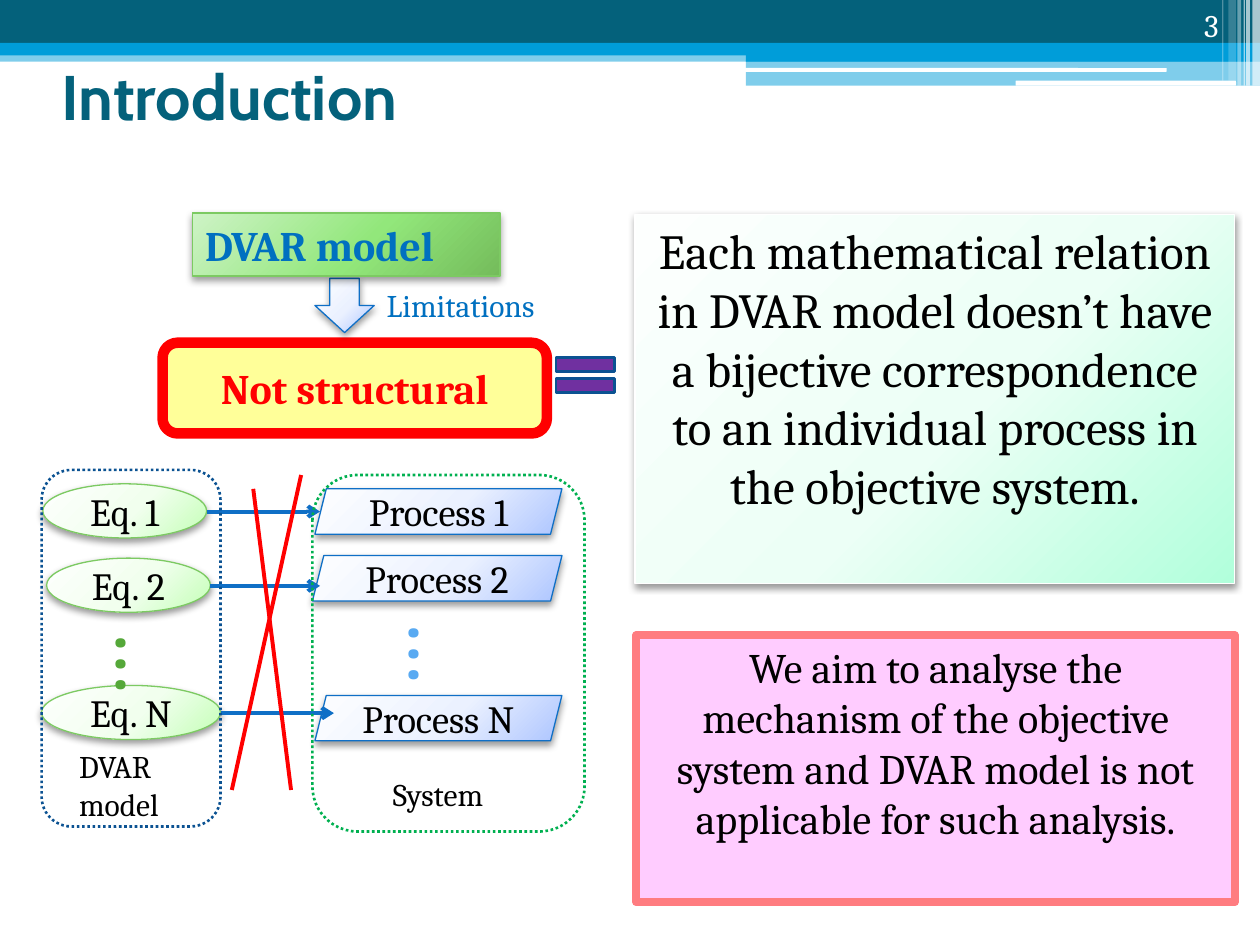
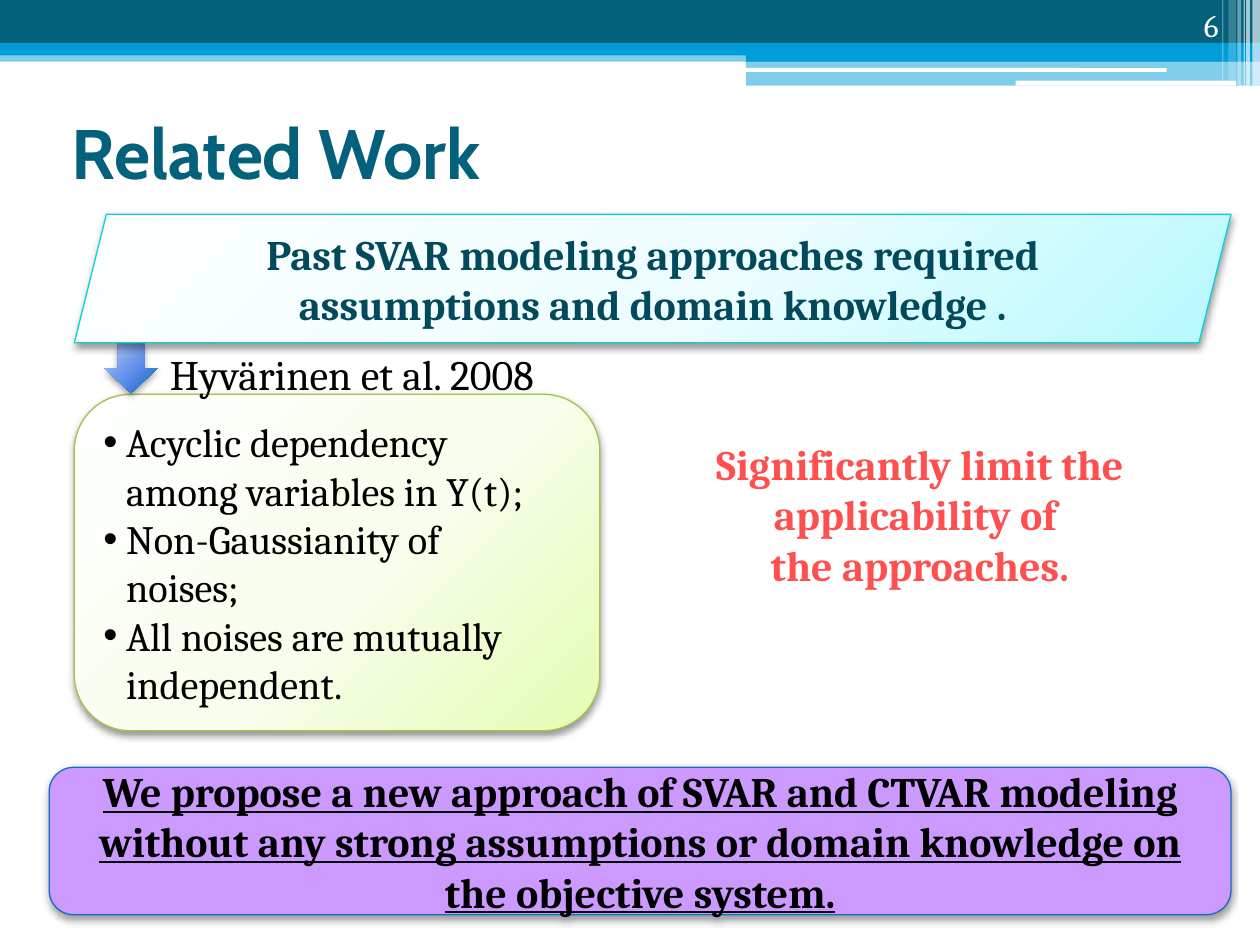
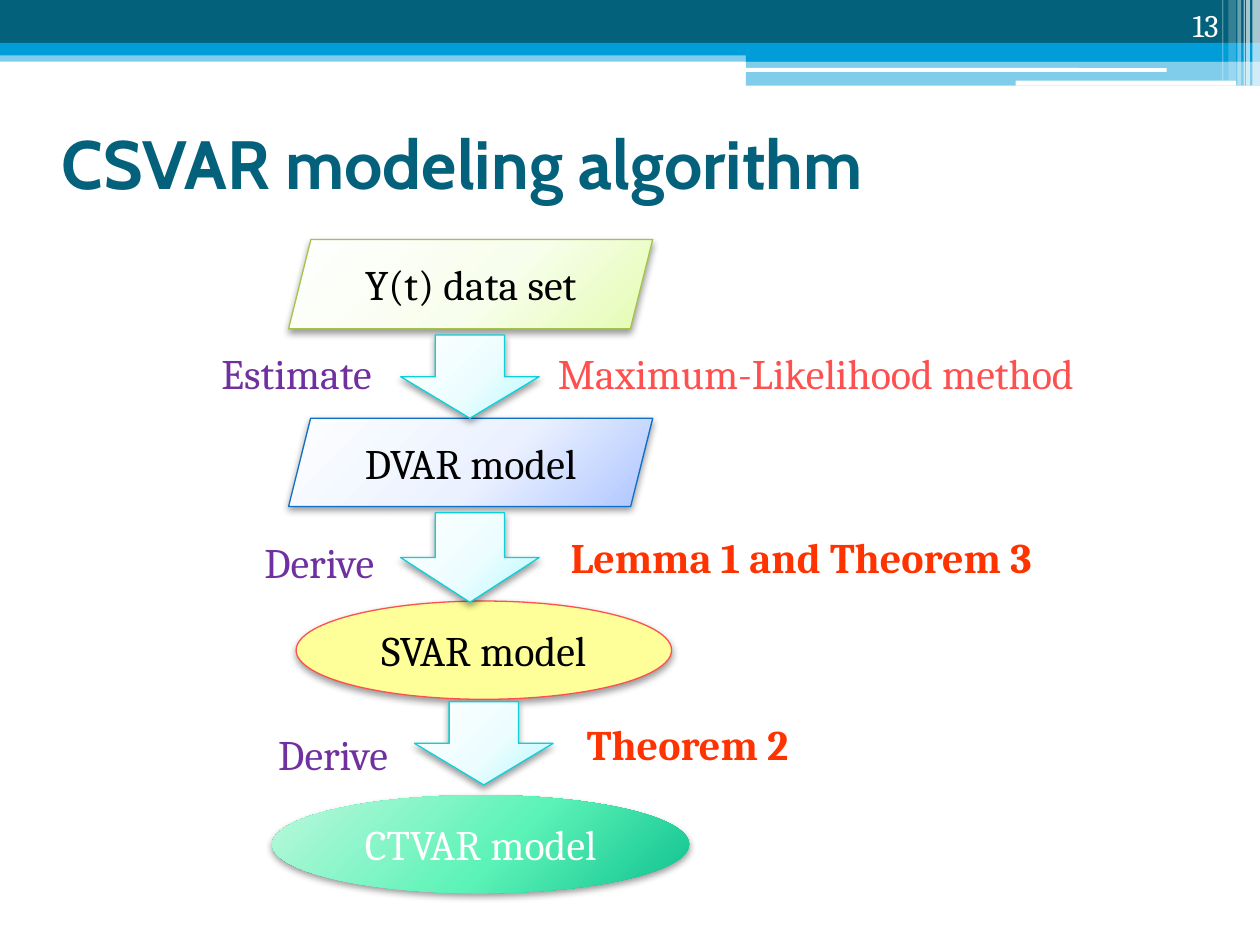
from pptx import Presentation
from pptx.dml.color import RGBColor
from pptx.enum.dml import MSO_LINE
from pptx.enum.shapes import MSO_CONNECTOR, MSO_SHAPE as SHAPE
from pptx.enum.text import MSO_ANCHOR as ANCHOR, MSO_AUTO_SIZE as FIT, PP_ALIGN as ALIGN
from pptx.oxml import parse_xml
from pptx.oxml.ns import nsdecls, qn
from pptx.util import Inches, Pt

COLOURS = {
    "teal": "04617B", "deep teal": "03495C", "sky": "009DD9", "blue": "0F6FC6",
    "label blue": "0070C0", "navy": "0B5292", "dots blue": "59AAF2",
    "green": "7CCA62", "dots green": "55A839", "system green": "00B050",
    "lime": "A5C249", "cyan": "0BD0D9", "yellow": "FFFF99", "red": "FF0000",
    "coral": "FF5050", "orange": "FF3300", "rose": "FF7C80", "pink": "FFCCFF",
    "lilac": "CC99FF", "purple": "7030A0", "black": "000000", "white": "FFFFFF",
}
GRADIENTS = {
    "mint": ("FDFFFE", "ECFFF6", "B1FFDB"),
    "pale blue": ("FDFEFF", "EBF1FF", "ADC5FF"),
    "pale green": ("FEFFFE", "F1FFEE", "C4FFB7"),
    "pale lime": ("FEFFFE", "F8FEED", "E4FCB2"),
    "pale cyan": ("FEFFFF", "EDFDFF", "B5F9FF"),
    "strong green": ("CEF3C6", "92E77B", "74BC5B"),
    "strong blue": ("BDCCF3", "5D8EEA", "0E67B8"),
    "strong aqua": ("BCF8DC", "5CF3B7", "0FC190"),
}
TITLE_FONT, TEXT_FONT = "Cabin", "Cambria"

BAND = [
    (SHAPE.RECTANGLE, (0, 0.4, 10, 0.09), "sky", 50),
    (SHAPE.RECTANGLE, (0, 0, 10, 0.34), "teal", 100),
    (SHAPE.RECTANGLE, (0, 0.34, 10, 0.1), "sky", 100),
    (SHAPE.RECTANGLE, (5.92, 0.39, 4.08, 0.1), "sky", 100),
    (SHAPE.RECTANGLE, (5.92, 0.48, 4.08, 0.2), "sky", 50),
    (SHAPE.ROUNDED_RECTANGLE, (5.91, 0.54, 3.35, 0.03), "white", 100),
    (SHAPE.ROUNDED_RECTANGLE, (8.06, 0.64, 1.75, 0.04), "white", 100),
    (SHAPE.RECTANGLE, (9.94, 0, 0.06, 0.68), "white", 65),
    (SHAPE.RECTANGLE, (9.89, 0, 0.03, 0.68), "white", 65),
    (SHAPE.RECTANGLE, (9.87, 0, 0.01, 0.68), "white", 60),
    (SHAPE.RECTANGLE, (9.82, 0, 0.03, 0.68), "white", 40),
    (SHAPE.RECTANGLE, (9.75, 0, 0.06, 0.64), "white", 20),
    (SHAPE.RECTANGLE, (9.7, 0, 0.01, 0.64), "white", 30),
]


def rgb(name):
    return RGBColor.from_string(COLOURS[name])


def inches(box):
    return [Inches(length) for length in box]


def offset(region, box):
    return (region[0] + box[0], region[1] + box[1], *box[2:])


def paint_gradient(shape, name):
    shape.fill.gradient()
    stops = "".join(
        f'<a:gs pos="{position}000"><a:srgbClr val="{colour}"/></a:gs>'
        for position, colour in zip((0, 55, 100), GRADIENTS[name]))
    gradient = parse_xml(
        f'<a:gradFill {nsdecls("a")} rotWithShape="1"><a:gsLst>{stops}</a:gsLst>'
        '<a:path path="circle"><a:fillToRect l="-40000" t="-90000" r="140000" b="190000"/>'
        '</a:path></a:gradFill>')
    properties = shape.element.spPr
    properties.replace(properties.find(qn("a:gradFill")), gradient)


def paint(shape, fill=None, line=None, width=0.75, shadow=False, alpha=100):
    if fill in GRADIENTS:
        paint_gradient(shape, fill)
    elif fill:
        shape.fill.solid()
        shape.fill.fore_color.rgb = rgb(fill)
        if alpha < 100:
            colour = next(shape.element.spPr.iter(qn("a:srgbClr")))
            colour.append(parse_xml(f'<a:alpha {nsdecls("a")} val="{alpha}000"/>'))
    else:
        shape.fill.background()
    if line:
        shape.line.color.rgb = rgb(line)
        shape.line.width = Pt(width)
    else:
        shape.line.fill.background()
    shape.shadow.inherit = False
    if shadow:
        shape.element.spPr.find(qn("a:effectLst")).append(parse_xml(
            f'<a:outerShdw {nsdecls("a")} blurRad="{Pt(4.1)}" dist="{Pt(2)}" dir="5400000" '
            'rotWithShape="0"><a:srgbClr val="000000"><a:alpha val="40000"/></a:srgbClr>'
            '</a:outerShdw>'))


def write(shape, lines, size=24, colour="black", bold=False, underline=False, font=TEXT_FONT,
          align=ALIGN.CENTER, anchor=ANCHOR.MIDDLE, wrap=True, fit=FIT.NONE):
    frame = shape.text_frame
    frame.word_wrap, frame.auto_size, frame.vertical_anchor = wrap, fit, anchor
    for index, line in enumerate(lines):
        paragraph = frame.add_paragraph() if index else frame.paragraphs[0]
        paragraph.alignment = align
        run = paragraph.add_run()
        run.text = line
        run.font.name, run.font.size = font, Pt(size)
        run.font.bold, run.font.underline = bold, underline
        run.font.color.rgb = rgb(colour)


def add_figure(slide, kind, box, *lines, fill=None, line=None, width=0.75, shadow=False,
               alpha=100, **style):
    figure = slide.shapes.add_shape(kind, *inches(box))
    paint(figure, fill, line, width, shadow, alpha)
    if lines:
        write(figure, lines, **style)
    return figure


def add_label(slide, box, *lines, **style):
    label = slide.shapes.add_textbox(*inches(box))
    settings = dict(align=ALIGN.LEFT, anchor=ANCHOR.TOP, wrap=False, fit=FIT.SHAPE_TO_FIT_TEXT)
    write(label, lines, **{**settings, **style})
    return label


def add_line(slide, start, end, colour, arrow=False):
    line = slide.shapes.add_connector(MSO_CONNECTOR.STRAIGHT, *inches(start + end))
    line.line.color.rgb = rgb(colour)
    line.line.width = Pt(2.25)
    if arrow:
        line.line.fill
        line.element.spPr.find(qn("a:ln")).append(
            parse_xml(f'<a:tailEnd {nsdecls("a")} type="arrow"/>'))
    line.element.spPr.append(parse_xml(f'<a:effectLst {nsdecls("a")}/>'))


def add_band_to_master(deck, slide):
    tree = deck.slide_master.shapes.element
    for index, (kind, box, fill, alpha) in enumerate(BAND):
        stripe = add_figure(slide, kind, box, fill=fill, alpha=alpha)
        tree.insert(2 + index, stripe.element)


def start_slide(deck, layout, title, corner, number, size, anchor=ANCHOR.MIDDLE):
    slide = deck.slides.add_slide(deck.slide_layouts.get_by_name(layout))
    heading = slide.shapes.title
    heading.left, heading.top, heading.width, heading.height = inches((*corner, 9, 1.17))
    write(heading, [title], size, "teal", True, font=TITLE_FONT, align=ALIGN.LEFT, anchor=anchor)
    add_label(slide, (8.94, 0, 0.83, 0.4), number, size=18, colour="white",
              align=ALIGN.RIGHT, anchor=ANCHOR.BOTTOM, wrap=True, fit=FIT.NONE)
    return slide


def add_limitation(slide, region):
    add_figure(slide, SHAPE.FLOWCHART_ALTERNATE_PROCESS, offset(region, (0, 1.03, 3.05, 0.72)),
               "Not structural", fill="yellow", line="red", width=6, colour="red", bold=True)
    add_figure(slide, SHAPE.MATH_EQUAL, offset(region, (3.04, 1.05, 0.63, 0.47)),
               fill="purple", line="navy", width=1.5)
    add_figure(slide, SHAPE.DOWN_ARROW, offset(region, (1.21, 0.52, 0.47, 0.43)),
               fill="pale blue", line="blue", shadow=True)
    add_label(slide, offset(region, (1.68, 0.53, 1.5, 0.4)), "Limitations",
              size=18, colour="label blue")
    add_figure(slide, SHAPE.RECTANGLE, offset(region, (0.24, 0, 2.44, 0.5)), "DVAR model",
               fill="strong green", line="green", shadow=True, colour="label blue", bold=True,
               align=ALIGN.LEFT, anchor=ANCHOR.TOP, wrap=False, fit=FIT.SHAPE_TO_FIT_TEXT)


def add_correspondence(slide, region):
    rows = [
        ("1", (0.01, 0.11, 1.3), (2.17, 0.15, 1.96), 2.21),
        ("2", (0.04, 0.7, 1.3), (2.15, 0.68, 1.98), 2.21),
        ("N", (0, 1.71, 1.42), (2.17, 1.79, 1.96), 2.32),
    ]
    for index, (left, top, width), process, arrow_end in rows:
        add_figure(slide, SHAPE.OVAL, offset(region, (left, top, width, 0.43)), f"Eq. {index}",
                   fill="pale green", line="green", shadow=True, size=22)
        add_figure(slide, SHAPE.PARALLELOGRAM, offset(region, (*process, 0.36)),
                   f"Process {index}", fill="pale blue", line="blue", shadow=True, size=22)
        middle = top + 0.22
        add_line(slide, offset(region, (left + width, middle)),
                 offset(region, (arrow_end, middle)), "blue", arrow=True)
    for corner, colour in (((0.3, 1.16), "dots green"), ((2.62, 1.08), "dots blue")):
        dots = add_label(slide, offset(region, (*corner, 1.04, 0.67)), "…",
                         size=50, colour=colour)
        dots.text_frame._txBody.bodyPr.set("vert", "eaVert")
    for start, end in (((2.06, 0.04), (1.51, 2.54)), ((1.68, 0.15), (1.98, 2.54))):
        add_line(slide, offset(region, start), offset(region, end), "red")
    for box, colour in (((0, 0, 1.42, 2.83), "navy"), ((2.15, 0.04, 2.16, 2.83), "system green")):
        group = add_figure(slide, SHAPE.ROUNDED_RECTANGLE, offset(region, box),
                           line=colour, width=1.5)
        group.line.dash_style = MSO_LINE.ROUND_DOT
    add_label(slide, offset(region, (0.2, 2.15, 0.97, 0.71)), "DVAR", "model", size=18)
    add_label(slide, offset(region, (2.69, 2.37, 1.01, 0.4)), "System", size=18)


def add_argument(slide, region):
    add_figure(slide, SHAPE.RECTANGLE, offset(region, (0, 0, 4.76, 2.93)),
               "Each mathematical relation in DVAR model doesn’t have a bijective "
               "correspondence to an individual process in the objective system.",
               fill="mint", line="white", shadow=True, size=28, anchor=ANCHOR.TOP)
    add_figure(slide, SHAPE.RECTANGLE, offset(region, (0.01, 3.34, 4.75, 2.12)),
               "We aim to analyse the mechanism of the objective system and DVAR model "
               "is not applicable for such analysis.",
               fill="pink", line="rose", width=4.5, anchor=ANCHOR.TOP)


def build_introduction(deck):
    slide = start_slide(deck, "Title Only", "Introduction", (0.39, 0.52), "3", 36, ANCHOR.TOP)
    slide.shapes.title.text_frame.paragraphs[0].line_spacing = 0.8
    add_band_to_master(deck, slide)
    add_limitation(slide, (1.29, 1.69))
    add_argument(slide, (5.04, 1.7))
    add_correspondence(slide, (0.33, 3.73))


def add_assumptions(slide, region):
    assumptions = slide.placeholders[1]
    box = inches(offset(region, (0, 0, 4.17, 2.67)))
    assumptions.left, assumptions.top, assumptions.width, assumptions.height = box
    assumptions.element.spPr.append(parse_xml(
        f'<a:prstGeom {nsdecls("a")} prst="roundRect"><a:avLst/></a:prstGeom>'))
    paint(assumptions, "pale lime", "lime", shadow=True)
    write(assumptions, ["Acyclic dependency", "among variables in Y(t);", "Non-Gaussianity of",
                        "noises;", "All noises are mutually", "independent."],
          size=23, align=ALIGN.LEFT)
    for index, paragraph in enumerate(assumptions.text_frame.paragraphs):
        paragraph.space_before = Pt(0)
        continued = index % 2
        properties = paragraph._p.get_or_add_pPr()
        properties.set("marL", str(Inches(0.18)))
        properties.set("indent", str(Inches(0 if continued else -0.18)))
        if continued:
            properties.append(parse_xml(f'<a:buNone {nsdecls("a")}/>'))


def build_related_work(deck):
    slide = start_slide(deck, "Title and Content", "Related Work", (0.47, 0.62), "6", 40)
    add_assumptions(slide, (0.59, 3.13))
    add_figure(slide, SHAPE.DOWN_ARROW, (0.83, 2.73, 0.42, 0.39),
               fill="strong blue", shadow=True)
    add_figure(slide, SHAPE.PARALLELOGRAM, (0.59, 1.7, 9.18, 1.02),
               "Past SVAR modeling approaches required assumptions and domain knowledge .",
               fill="pale cyan", line="cyan", shadow=True, colour="deep teal", bold=True)
    add_label(slide, (1.25, 2.72, 3.45, 0.5), "Hyvärinen et al. 2008")
    add_label(slide, (4.96, 3.43, 4.68, 1.31), "Significantly limit the applicability of ",
              "the approaches.", colour="coral", bold=True, align=ALIGN.CENTER, wrap=True)
    add_figure(slide, SHAPE.ROUNDED_RECTANGLE, (0.39, 6.09, 9.38, 1.17),
               "We propose a new approach of SVAR and CTVAR modeling without any strong "
               "assumptions or domain knowledge on the objective system.",
               fill="lilac", line="blue", shadow=True, bold=True, underline=True)


def add_model_flow(slide, region):
    models = [
        (SHAPE.PARALLELOGRAM, (0.63, 0, 2.89, 0.71), "Y(t) data set",
         "pale lime", "lime", "black"),
        (SHAPE.PARALLELOGRAM, (0.63, 1.42, 2.89, 0.7), "DVAR model",
         "pale blue", "blue", "black"),
        (SHAPE.OVAL, (0.69, 2.87, 2.98, 0.78), "SVAR model", "yellow", "coral", "black"),
        (SHAPE.OVAL, (0.5, 4.41, 3.31, 0.78), "CTVAR model", "strong aqua", None, "white"),
    ]
    for kind, box, name, fill, line, colour in models:
        add_figure(slide, kind, offset(region, box), name, fill=fill, line=line,
                   shadow=True, colour=colour)
    steps = [
        ((1.52, 0.76, 1.1, 0.66), "Estimate", (0, 0.81, 1.53, 0.5),
         "Maximum-Likelihood method", (2.67, 0.81, 4.68, 0.5), "coral"),
        ((1.52, 2.17, 1.1, 0.71), "Derive", (0.34, 2.31, 1.18, 0.5),
         "Lemma 1 and Theorem 3", (2.77, 2.27, 4.46, 0.5), "orange"),
        ((1.63, 3.67, 1.1, 0.66), "Derive", (0.45, 3.83, 1.18, 0.5),
         "Theorem 2", (2.9, 3.75, 2.07, 0.5), "orange"),
    ]
    for arrow, action, action_box, method, method_box, colour in steps:
        add_figure(slide, SHAPE.DOWN_ARROW, offset(region, arrow),
                   fill="pale cyan", line="cyan", shadow=True)
        add_label(slide, offset(region, action_box), action, colour="purple")
        add_label(slide, offset(region, method_box), method, colour=colour,
                  bold=colour == "orange")


def build_algorithm(deck):
    slide = start_slide(deck, "Title Only", "CSVAR modeling algorithm", (0.39, 0.7), "13", 39)
    add_model_flow(slide, (1.66, 1.9))


def main():
    deck = Presentation()
    deck.slide_width, deck.slide_height = Inches(10), Inches(7.5)
    build_introduction(deck)
    build_related_work(deck)
    build_algorithm(deck)
    deck.save("out.pptx")


if __name__ == "__main__":
    main()
